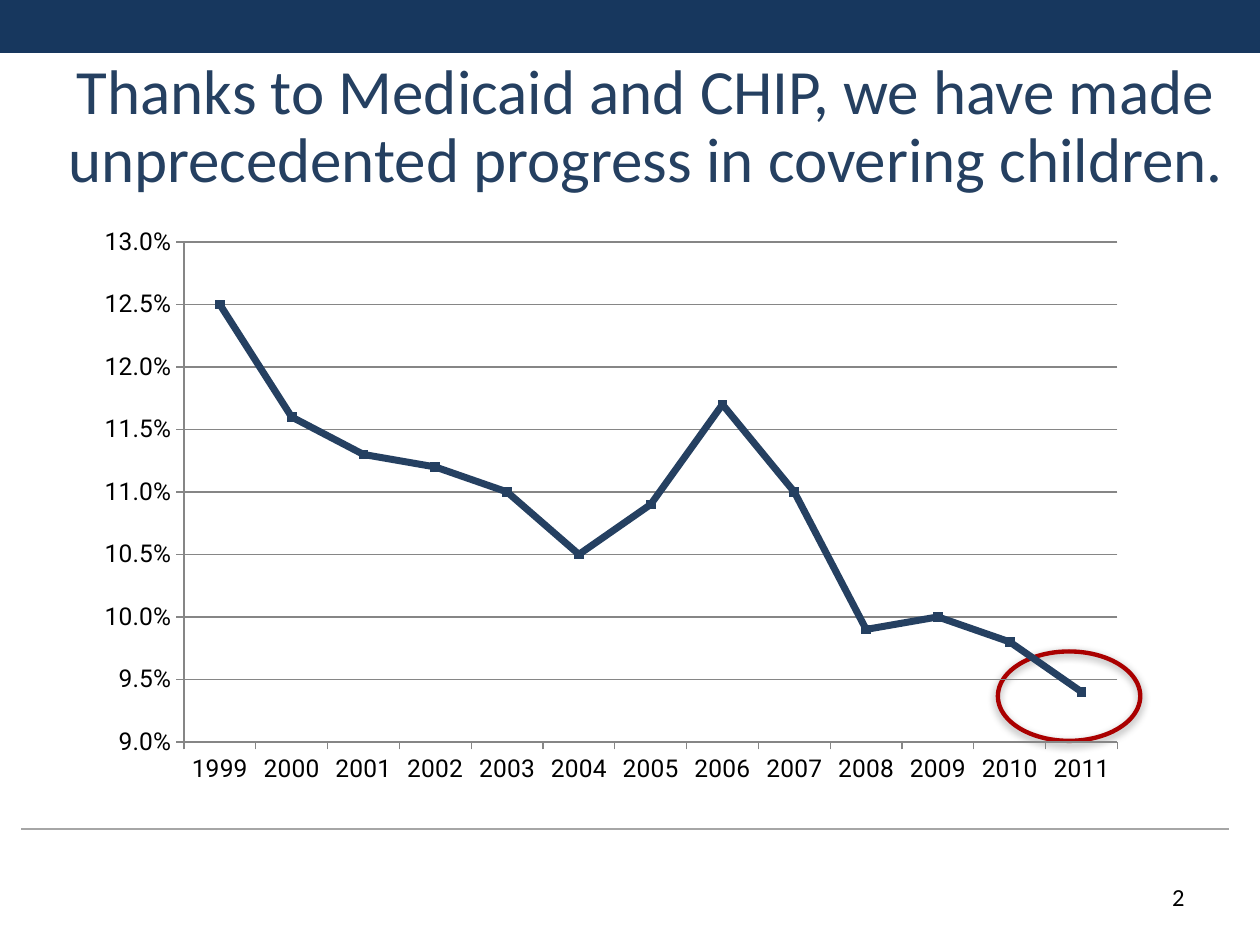
from collections import namedtuple
from lxml.etree import SubElement
from pptx import Presentation
from pptx.chart.data import CategoryChartData
from pptx.dml.color import RGBColor
from pptx.enum.chart import XL_CHART_TYPE, XL_MARKER_STYLE, XL_TICK_MARK
from pptx.enum.shapes import MSO_CONNECTOR, MSO_SHAPE
from pptx.enum.text import MSO_ANCHOR, MSO_AUTO_SIZE, PP_ALIGN
from pptx.oxml import parse_xml
from pptx.oxml.ns import nsdecls, qn
from pptx.util import Pt

PX = 9144

Theme = namedtuple("Theme", "band navy red rule grid ink head body title small")
theme = Theme(
    band=RGBColor.from_string("17375E"),
    navy=RGBColor.from_string("254061"),
    red=RGBColor.from_string("AA0000"),
    rule=RGBColor.from_string("A6A6A6"),
    grid=RGBColor.from_string("868686"),
    ink=RGBColor.from_string("000000"),
    head="Calibri",
    body="Roboto",
    title=Pt(36),
    small=Pt(14),
)


def box(*sides):
    return [side * PX for side in sides]


def write(shape, text, size, color, align, anchor=MSO_ANCHOR.TOP, space=None):
    frame = shape.text_frame
    frame.word_wrap = True
    frame.auto_size = MSO_AUTO_SIZE.NONE
    frame.vertical_anchor = anchor
    frame.text = text
    para = frame.paragraphs[0]
    para.alignment = align
    para.line_spacing = space
    font = para.runs[0].font
    font.name = theme.head
    font.size = size
    font.color.rgb = color


deck = Presentation()
deck.slide_width, deck.slide_height = box(1000, 750)
slide = deck.slides.add_slide(deck.slide_layouts[5])
shapes = slide.shapes

title = shapes.title
title.left, title.top, title.width, title.height = box(25, 45, 975, 113)
write(
    title,
    "Thanks to Medicaid and CHIP, we have made unprecedented progress in covering children.",
    size=theme.title,
    color=theme.navy,
    align=PP_ALIGN.CENTER,
    anchor=MSO_ANCHOR.MIDDLE,
    space=0.9,
)

band = shapes.add_shape(MSO_SHAPE.RECTANGLE, *box(0, 0, 1000, 42))
band.shadow.inherit = False
band.fill.solid()
band.fill.fore_color.rgb = theme.band
band.line.fill.background()

rule = shapes.add_connector(MSO_CONNECTOR.STRAIGHT, *box(17, 658, 975, 658))
rule.line.color.rgb = theme.rule
rule.line.width = Pt(0.75)
SubElement(rule._element.spPr, qn("a:effectLst"))

ring = shapes.add_shape(MSO_SHAPE.OVAL, *box(792, 517, 113, 71))
ring.fill.background()
ring.line.color.rgb = theme.red
ring.line.width = Pt(2.5)
ring._element.spPr.append(parse_xml(
    f'<a:effectLst {nsdecls("a")}>'
    '<a:outerShdw blurRad="63500" dist="20320" dir="5400000" rotWithShape="0">'
    '<a:srgbClr val="000000"><a:alpha val="38000"/></a:srgbClr>'
    '</a:outerShdw></a:effectLst>'
))

page = shapes.add_textbox(*box(717, 695, 233, 40))
write(page, "2", size=theme.small, color=theme.ink, align=PP_ALIGN.RIGHT)

rates = [0.125, 0.116, 0.113, 0.112, 0.11, 0.105, 0.109,
         0.117, 0.11, 0.099, 0.1, 0.098, 0.094]
data = CategoryChartData(number_format="0.0%")
data.categories = range(1999, 2012)
data.add_series("Series 1", rates)
chart = shapes.add_chart(
    XL_CHART_TYPE.LINE_MARKERS, *box(50, 175, 842, 461), data
).chart
chart.has_legend = False
chart.has_title = False
chart.font.name = theme.body
chart.font.size = theme.small
chart.font.color.rgb = theme.ink

years, scale = chart.category_axis, chart.value_axis
scale.minimum_scale = 0.09
scale.maximum_scale = 0.13
scale.major_unit = 0.005
scale.has_major_gridlines = True
years.has_major_gridlines = False
for axis, code in ((years, "General"), (scale, "0.0%")):
    axis.major_tick_mark = XL_TICK_MARK.OUTSIDE
    axis.minor_tick_mark = XL_TICK_MARK.NONE
    axis.tick_labels.number_format = code
    axis.tick_labels.number_format_is_linked = False
for line in (years.format.line, scale.format.line, scale.major_gridlines.format.line):
    line.color.rgb = theme.grid
    line.width = Pt(0.75)

plot = chart.plots[0]
plot.vary_by_categories = False
trend = plot.series[0]
trend.smooth = False
trend.format.line.color.rgb = theme.navy
trend.format.line.width = Pt(4)
trend.marker.style = XL_MARKER_STYLE.SQUARE
trend.marker.size = 5
trend.marker.format.fill.solid()
trend.marker.format.fill.fore_color.rgb = theme.navy
trend.marker.format.line.color.rgb = theme.navy

area = chart._chartSpace.chart.plotArea
for old in area.findall(qn("c:layout")):
    area.remove(old)
area.insert(0, parse_xml(
    f'<c:layout {nsdecls("c")}><c:manualLayout>'
    '<c:layoutTarget val="inner"/><c:xMode val="edge"/><c:yMode val="edge"/>'
    '<c:x val="0.114"/><c:y val="0.037"/><c:w val="0.88"/><c:h val="0.861"/>'
    '</c:manualLayout></c:layout>'
))

deck.save("out.pptx")
